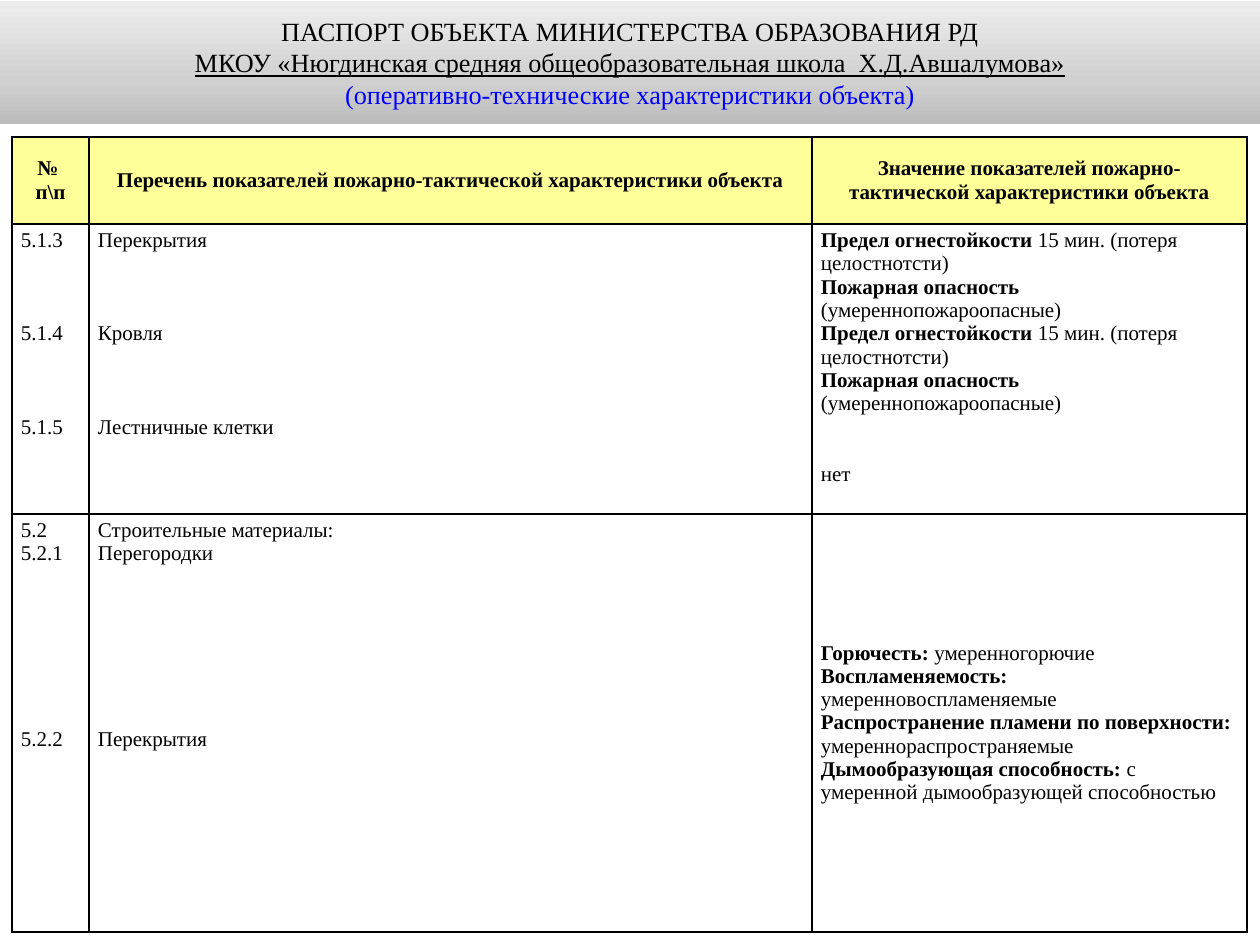
from pptx import Presentation, util as u
from pptx.dml.color import RGBColor
from pptx.enum import text
from pptx.oxml import parse_xml
from pptx.oxml.ns import nsdecls

PX = 914400 // 126
FONT = "Times New Roman"
LINE_PT = 13.3
TITLE = [
    ("ПАСПОРТ ОБЪЕКТА МИНИСТЕРСТВА ОБРАЗОВАНИЯ РД", "000000", False),
    ("МКОУ «Нюгдинская средняя общеобразовательная школа  Х.Д.Авшалумова»", "000000", True),
    ("(оперативно-технические характеристики объекта)", "0000FF", False),
]
GRADIENT = [(0, "BCBCBC"), (35, "D0D0D0"), (100, "EDEDED")]

COLS = [77, 723, 435]
ROWS = [87, 290, 418]
HEADER = [
    ["№ ", "п\\п"],
    ["Перечень показателей пожарно-тактической характеристики объекта"],
    ["Значение показателей пожарно-тактической характеристики объекта"],
]
# Each paragraph: (blank lines above, bold text, regular text)
FIRE_LIMITS = [
    (0, "Предел огнестойкости ", "15 мин. (потеря целостнотсти)"),
    (0, "Пожарная опасность", ""),
    (0, "", "(умереннопожароопасные)"),
]
MATERIALS = [
    (0, "Горючесть: ", "умеренногорючие"),
    (0, "Воспламеняемость: ", "умеренновоспламеняемые"),
    (0, "Распространение пламени по поверхности:", ""),
    (0, "", "умереннораспространяемые"),
    (0, "Дымообразующая способность: ", "с умеренной дымообразующей способностью"),
]
TABLE = [
    [[(0, line, "") for line in cell] for cell in HEADER],
    [
        [(0, "", "5.1.3"), (3, "", "5.1.4"), (3, "", "5.1.5")],
        [(0, "", "Перекрытия"), (3, "", "Кровля"), (3, "", "Лестничные клетки")],
        FIRE_LIMITS * 2 + [(2, "", "нет")],
    ],
    [
        [(0, "", "5.2"), (0, "", "5.2.1"), (7, "", "5.2.2")],
        [(0, "", "Строительные материалы:"), (0, "", "Перегородки"), (7, "", "Перекрытия")],
        MATERIALS,
    ],
]
MIDDLE = {(0, 0), (0, 1), (0, 2), (2, 2)}


def rgb(value):
    return RGBColor.from_string(value)


def add_run(p, words, size, color="000000", bold=False, underline=False):
    r = p.add_run()
    r.text = words
    f = r.font
    f.name, f.size, f.bold, f.underline = FONT, u.Pt(size), bold, underline
    f.color.rgb = rgb(color)


def paragraph(tf, i):
    return tf.add_paragraph() if i else tf.paragraphs[0]


def add_borders(cell):
    tcPr = cell._tc.get_or_add_tcPr()
    for side in "LRTB":
        tcPr.append(parse_xml(
            f'<a:ln{side} {nsdecls("a")} w="12700"><a:solidFill>'
            f'<a:srgbClr val="000000"/></a:solidFill></a:ln{side}>'))


def build_title(s):
    sp = s.shapes.title
    sp.left, sp.top, sp.width, sp.height = 0, PX, 1260 * PX, 123 * PX
    stops = "".join(f'<a:gs pos="{pos * 1000}"><a:srgbClr val="{c}"/></a:gs>' for pos, c in GRADIENT)
    sp._element.spPr.append(parse_xml(
        f'<a:gradFill {nsdecls("a")} rotWithShape="1"><a:gsLst>{stops}</a:gsLst>'
        '<a:lin ang="16200000" scaled="1"/></a:gradFill>'))
    tf = sp.text_frame
    tf.word_wrap = True
    tf.auto_size = text.MSO_AUTO_SIZE.NONE
    tf.vertical_anchor = text.MSO_ANCHOR.MIDDLE
    for i, (words, color, underline) in enumerate(TITLE):
        p = paragraph(tf, i)
        p.alignment = text.PP_ALIGN.CENTER
        add_run(p, words, 15, color, underline=underline)


def fill_cell(cell, paragraphs, header, middle):
    add_borders(cell)
    cell.fill.solid()
    cell.fill.fore_color.rgb = rgb("FFFF99" if header else "FFFFFF")
    cell.margin_left = cell.margin_right = 9 * PX
    cell.margin_top = cell.margin_bottom = 5 * PX
    cell.vertical_anchor = text.MSO_ANCHOR.MIDDLE if middle else text.MSO_ANCHOR.TOP
    for i, (gap, strong, plain) in enumerate(paragraphs):
        p = paragraph(cell.text_frame, i)
        p.alignment = text.PP_ALIGN.CENTER if header else text.PP_ALIGN.LEFT
        if gap:
            p.space_before = u.Pt(round(gap * LINE_PT))
        for words, bold in ((strong, True), (plain, False)):
            if words:
                add_run(p, words, 12, bold=bold)


def build_table(s):
    table = s.shapes.add_table(len(ROWS), len(COLS), 12 * PX, 137 * PX,
                               sum(COLS) * PX, sum(ROWS) * PX).table
    for col, width in zip(table.columns, COLS):
        col.width = width * PX
    for row, height in zip(table.rows, ROWS):
        row.height = height * PX
    for i, cells in enumerate(TABLE):
        for j, paragraphs in enumerate(cells):
            fill_cell(table.cell(i, j), paragraphs, i == 0, (i, j) in MIDDLE)


def main():
    prs = Presentation()
    prs.slide_width, prs.slide_height = u.Inches(10), u.Inches(7.5)
    s = prs.slides.add_slide(prs.slide_layouts[5])
    build_table(s)
    build_title(s)
    prs.save("out.pptx")


if __name__ == "__main__":
    main()
